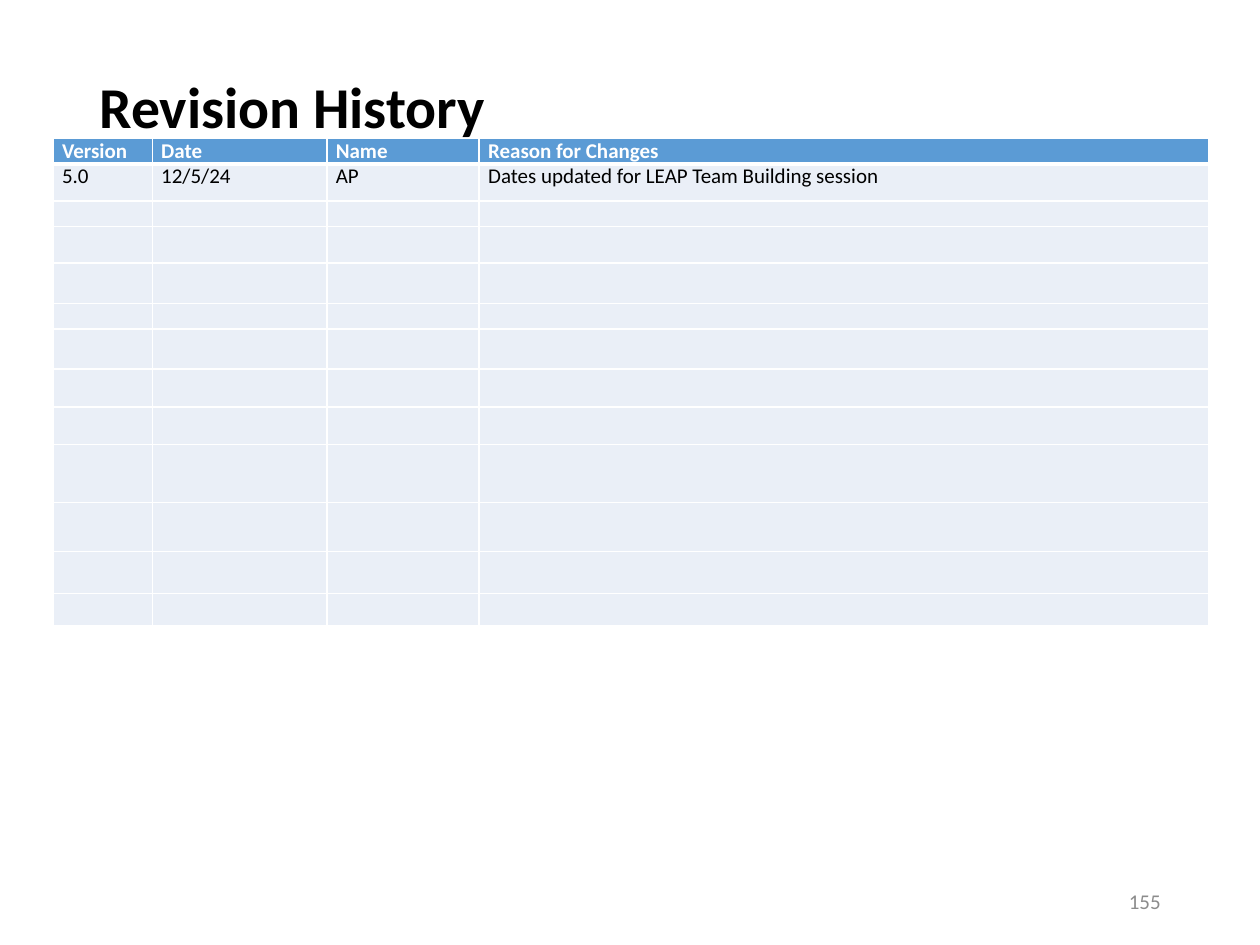
from dataclasses import dataclass

from lxml.etree import SubElement
from pptx import Presentation
from pptx.dml.color import RGBColor
from pptx.enum.text import MSO_ANCHOR, PP_ALIGN
from pptx.oxml.ns import qn
from pptx.util import Cm, Pt

BLACK = RGBColor(0x00, 0x00, 0x00)
WHITE = RGBColor(0xFF, 0xFF, 0xFF)
BLUE = RGBColor(0x5B, 0x9B, 0xD5)
PALE = RGBColor(0xEA, 0xEF, 0xF7)
GREY = RGBColor(0x8C, 0x8C, 0x8C)
FACE = "Calibri"


@dataclass
class Column:
    head: str
    entry: str
    width: float


COLUMNS = [
    Column("Version", "5.0", 2.0),
    Column("Date", "12/5/24", 3.52),
    Column("Name", "AP", 3.07),
    Column("Reason for Changes", "Dates updated for LEAP Team Building session", 14.7),
]
HEIGHTS = [0.51, 0.74, 0.51, 0.74, 0.81, 0.51, 0.81,
           0.76, 0.76, 1.17, 0.99, 0.84, 0.66]


def style(para, size: float, color: RGBColor, bold: bool = False) -> None:
    font = para.font
    font.name, font.size, font.bold = FACE, Pt(size), bold
    font.color.rgb = color


def place(shape, left: float, top: float, width: float, height: float) -> None:
    shape.left, shape.top = Cm(left), Cm(top)
    shape.width, shape.height = Cm(width), Cm(height)


def edge(cell, widths: dict[str, float]) -> None:
    """Draw white borders; they must stand before the fill in tcPr."""
    props = cell._tc.get_or_add_tcPr()
    for spot, (side, width) in enumerate(widths.items()):
        line = SubElement(props, qn(f"a:ln{side}"), w=str(Pt(width)))
        fill = SubElement(line, qn("a:solidFill"))
        SubElement(fill, qn("a:srgbClr"), val=str(WHITE))
        props.insert(spot, line)


def fill_cell(cell, text: str, row: int) -> None:
    head = row == 0
    cell.margin_left = cell.margin_right = Cm(0.18)
    cell.margin_top = cell.margin_bottom = 0
    cell.fill.solid()
    cell.fill.fore_color.rgb = BLUE if head else PALE
    edge(cell, {"L": 1, "R": 1, "T": 3 if row == 1 else 1, "B": 3 if head else 1})
    para = cell.text_frame.paragraphs[0]
    if text:
        para.text = text
        style(para, 12, WHITE if head else BLACK, head)
    else:
        # Keeps an empty row from growing to the default text size
        SubElement(para._p, qn("a:endParaRPr"), sz="1200")


def add_history(slide) -> None:
    total = sum(col.width for col in COLUMNS)
    table = slide.shapes.add_table(
        len(HEIGHTS), len(COLUMNS), Cm(1.07), Cm(2.79), Cm(total), Cm(sum(HEIGHTS))
    ).table
    table.horz_banding = False
    for row, height in enumerate(HEIGHTS):
        table.rows[row].height = Cm(height)
    for index, col in enumerate(COLUMNS):
        table.columns[index].width = Cm(col.width)
        texts = [col.head, col.entry] + [""] * (len(HEIGHTS) - 2)
        for row, text in enumerate(texts):
            fill_cell(table.cell(row, index), text, row)


def main() -> None:
    deck = Presentation()
    deck.slide_width, deck.slide_height = Cm(25.4), Cm(19.05)
    slide = deck.slides.add_slide(deck.slide_layouts[5])

    # Title
    title = slide.shapes.title
    place(title, 1.75, 1.02, 21.9, 3.68)
    frame = title.text_frame
    frame.text = "Revision History"
    frame.vertical_anchor = MSO_ANCHOR.TOP
    frame.margin_top = Cm(0.56)
    para = frame.paragraphs[0]
    para.alignment = PP_ALIGN.LEFT
    para.line_spacing = 0.9
    style(para, 33, BLACK, True)

    # Revision table
    add_history(slide)

    # Page number
    box = slide.shapes.add_textbox(Cm(17.93), Cm(17.65), Cm(5.72), Cm(1.02))
    frame = box.text_frame
    frame.word_wrap = True
    frame.vertical_anchor = MSO_ANCHOR.MIDDLE
    para = frame.paragraphs[0]
    para.text = "155"
    para.alignment = PP_ALIGN.RIGHT
    style(para, 12, GREY)

    deck.save("out.pptx")


if __name__ == "__main__":
    main()
